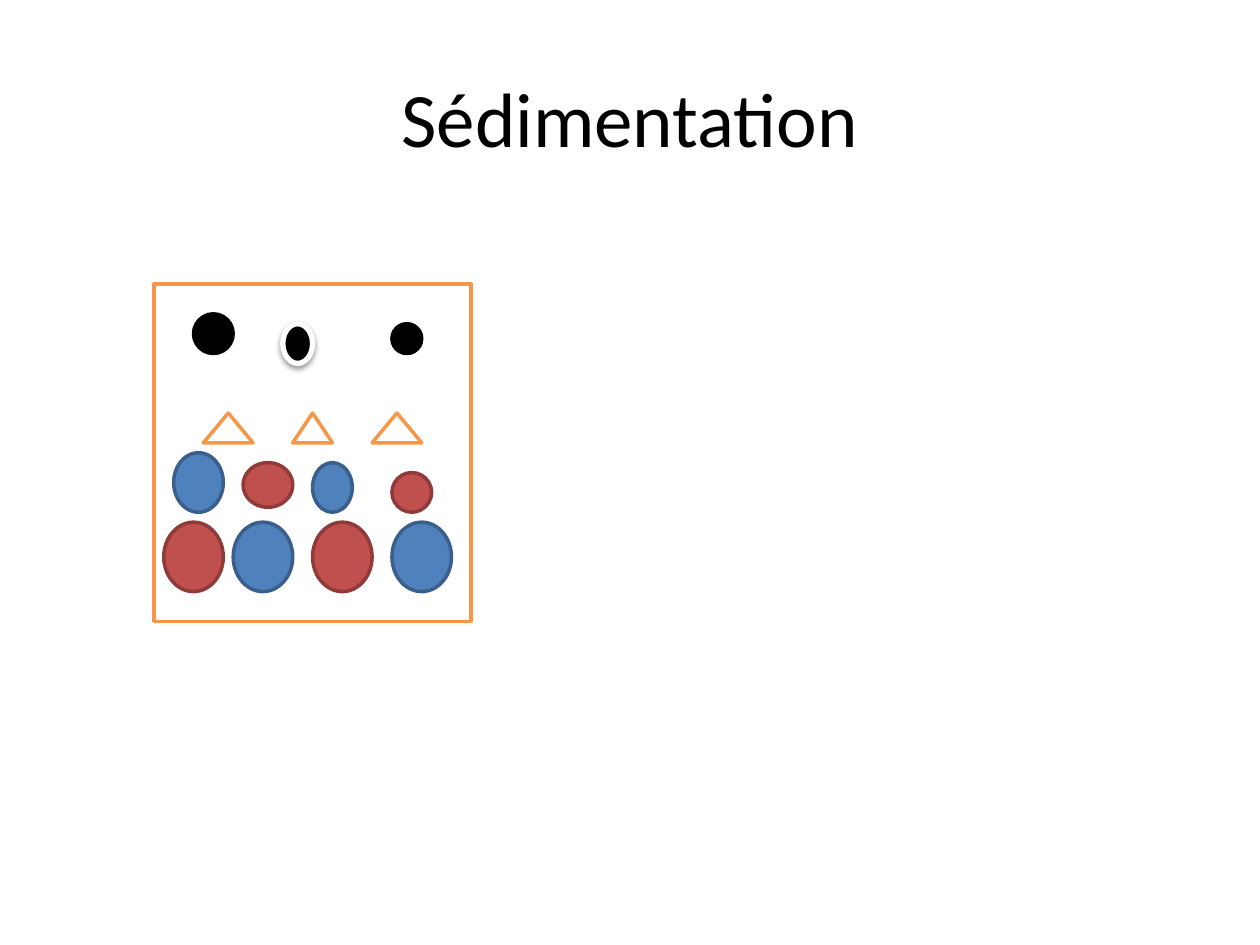
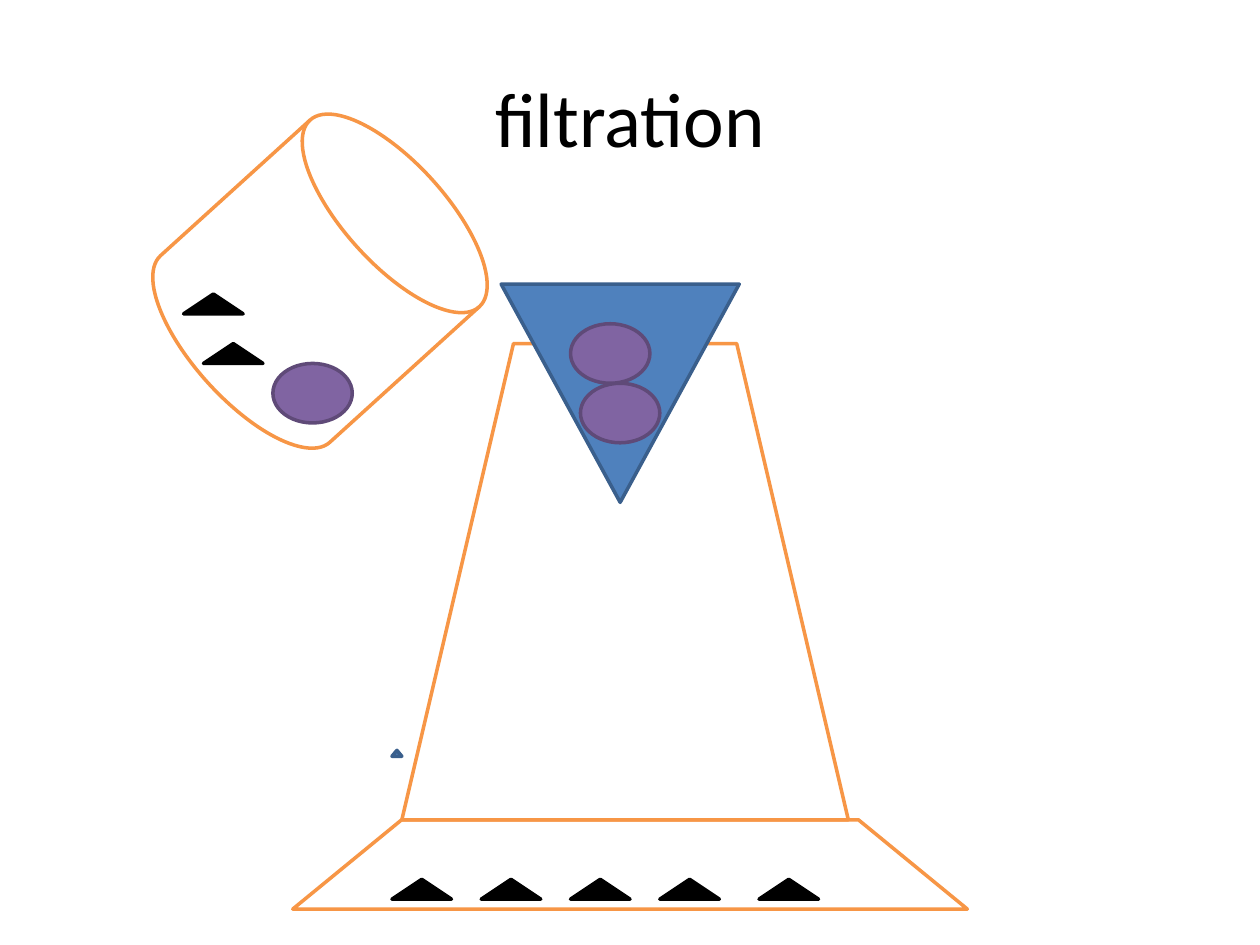
import lxml.etree
import pptx
import pptx.dml.color
import pptx.enum.shapes
import pptx.enum.text
import pptx.oxml.ns
import pptx.util

RGBColor = pptx.dml.color.RGBColor
Inches = pptx.util.Inches
MSO_SHAPE = pptx.enum.shapes.MSO_SHAPE

# Drawing grid: 127 columns across the slide, 2 mm each
SLIDE_W, SLIDE_H = 10, 7.5
CELL = SLIDE_W / 127
GRID_LEFT, GRID_TOP = 0.04, 0.05

BLACK = RGBColor(0x00, 0x00, 0x00)
WHITE = RGBColor(0xFF, 0xFF, 0xFF)
ORANGE = RGBColor(0xF7, 0x96, 0x46)
BLUE = RGBColor(0x4F, 0x81, 0xBD)
DARK_BLUE = RGBColor(0x3A, 0x5F, 0x8C)
RED = RGBColor(0xC0, 0x50, 0x4D)
DARK_RED = RGBColor(0x8E, 0x3B, 0x39)
PURPLE = RGBColor(0x80, 0x64, 0xA2)
DARK_PURPLE = RGBColor(0x5F, 0x4A, 0x78)

# Each style is a fill and a line colour
GLASS = (WHITE, ORANGE)
BLUE_GRAIN = (BLUE, DARK_BLUE)
RED_GRAIN = (RED, DARK_RED)
PURPLE_GRAIN = (PURPLE, DARK_PURPLE)
BLACK_GRAIN = (BLACK, BLACK)
RINGED_GRAIN = (BLACK, WHITE)


def write(tf, text, font="Calibri", size=44, color=BLACK,
          align=pptx.enum.text.PP_ALIGN.CENTER,
          anchor=pptx.enum.text.MSO_ANCHOR.MIDDLE):
    tf.vertical_anchor = anchor
    p = tf.paragraphs[0]
    p.alignment = align
    r = p.add_run()
    r.text = text
    r.font.name = font
    r.font.size = pptx.util.Pt(size)
    r.font.color.rgb = color


def add_titled_slide(prs, title):
    slide = prs.slides.add_slide(prs.slide_layouts[5])
    s = slide.shapes.title
    s.left, s.top = Inches(0.05 * SLIDE_W), Inches(0.04 * SLIDE_H)
    s.width, s.height = Inches(0.9 * SLIDE_W), Inches(SLIDE_H / 6)
    write(s.text_frame, title)
    return slide


def add_piece(slide, kind, style, col, row, cols, rows,
              rotation=0, adjust=None, line_width=2):
    """Draw a preset shape whose place and size are counted in grid cells."""
    s = slide.shapes.add_shape(
        kind, Inches(GRID_LEFT + col * CELL), Inches(GRID_TOP + row * CELL),
        Inches(cols * CELL), Inches(rows * CELL))
    s.shadow.inherit = False
    s.rotation = rotation
    if adjust is not None:
        s.adjustments[0] = adjust
    fill, line = style
    s.fill.solid()
    s.fill.fore_color.rgb = fill
    s.line.color.rgb = line
    s.line.width = pptx.util.Pt(line_width)
    return s


def add_drop_shadow(s, blur=3.1, distance=1.6, opacity=38):
    qn = pptx.oxml.ns.qn
    effects = s._element.spPr.find(qn("a:effectLst"))
    shadow = lxml.etree.SubElement(
        effects, qn("a:outerShdw"), blurRad=str(pptx.util.Pt(blur)),
        dist=str(pptx.util.Pt(distance)), dir="5400000", rotWithShape="0")
    color = lxml.etree.SubElement(shadow, qn("a:srgbClr"), val=str(BLACK))
    lxml.etree.SubElement(color, qn("a:alpha"), val=str(opacity * 1000))


def build_sedimentation(prs):
    slide = add_titled_slide(prs, "Sédimentation")
    add_piece(slide, MSO_SHAPE.RECTANGLE, GLASS, 15, 28, 32, 34)

    bottom_layer = zip((16, 23, 31, 39), (RED_GRAIN, BLUE_GRAIN) * 2)
    for col, style in bottom_layer:
        add_piece(slide, MSO_SHAPE.OVAL, style, col, 52, 6, 7)

    middle_layer = [
        (BLUE_GRAIN, 17, 45, 5, 6), (RED_GRAIN, 24, 46, 5, 4.5),
        (BLUE_GRAIN, 31, 46, 4, 5), (RED_GRAIN, 39, 47, 4, 4)]
    floating_grains = [(BLACK_GRAIN, 19, 31, 4, 4), (BLACK_GRAIN, 39, 32, 3, 3)]
    for grain in middle_layer + floating_grains:
        add_piece(slide, MSO_SHAPE.OVAL, *grain)

    ringed = add_piece(slide, MSO_SHAPE.OVAL, RINGED_GRAIN, 28, 32, 3, 4,
                       line_width=3)
    add_drop_shadow(ringed)

    for col, cols in ((20, 5), (29, 4), (37, 5)):
        add_piece(slide, MSO_SHAPE.ISOSCELES_TRIANGLE, GLASS, col, 41, cols, 3)


def build_filtration(prs):
    slide = add_titled_slide(prs, "filtration")
    add_piece(slide, MSO_SHAPE.TRAPEZOID, GLASS, 29, 82, 68, 9, adjust=1.22)
    add_piece(slide, MSO_SHAPE.FLOWCHART_EXTRACT, BLUE_GRAIN, 39, 75, 1, 0.6)
    add_piece(slide, MSO_SHAPE.TRAPEZOID, GLASS, 40, 34, 45, 48, adjust=0.25)
    add_piece(slide, MSO_SHAPE.FLOWCHART_DIRECT_ACCESS_STORAGE, GLASS,
              16.5, 15, 30.5, 25.4, rotation=317.8)
    add_piece(slide, MSO_SHAPE.ISOSCELES_TRIANGLE, BLUE_GRAIN, 50, 28, 24, 22,
              rotation=180)

    filtered = [(col, 88) for col in (39, 48, 57, 66, 76)]
    unpoured = [(20, 34), (18, 29)]
    for col, row in filtered + unpoured:
        add_piece(slide, MSO_SHAPE.ISOSCELES_TRIANGLE, BLACK_GRAIN,
                  col, row, 6, 2)
    for col, row in ((27, 36), (57, 32), (58, 38)):
        add_piece(slide, MSO_SHAPE.OVAL, PURPLE_GRAIN, col, row, 8, 6)


def main():
    prs = pptx.Presentation()
    prs.slide_width, prs.slide_height = Inches(SLIDE_W), Inches(SLIDE_H)
    build_sedimentation(prs)
    build_filtration(prs)
    prs.save("out.pptx")


if __name__ == "__main__":
    main()
